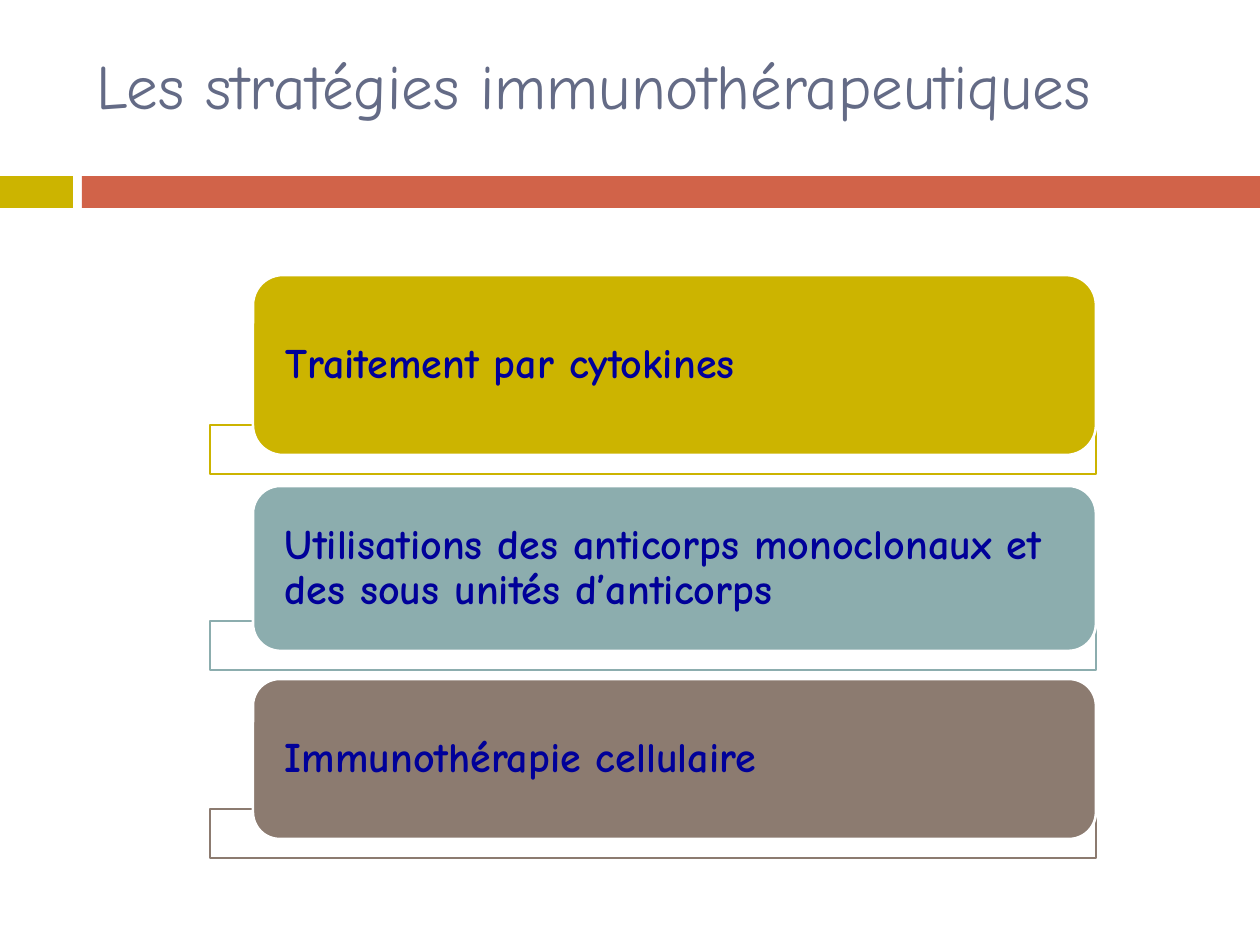
from pptx import Presentation
from pptx.dml.color import RGBColor
from pptx.enum.shapes import MSO_SHAPE
from pptx.enum.text import MSO_ANCHOR, PP_ALIGN
from pptx.util import Emu, Pt

RECTANGLE = MSO_SHAPE.RECTANGLE
ROUNDED = MSO_SHAPE.ROUNDED_RECTANGLE
MIDDLE = MSO_ANCHOR.MIDDLE
LEFT = PP_ALIGN.LEFT

GOLD = RGBColor(0xCC, 0xB4, 0x00)
CORAL = RGBColor(0xD1, 0x63, 0x49)
TEAL = RGBColor(0x8C, 0xAD, 0xAE)
TAUPE = RGBColor(0x8C, 0x7B, 0x70)
WHITE = RGBColor(0xFF, 0xFF, 0xFF)
SLATE = RGBColor(0x64, 0x6B, 0x86)
NAVY = RGBColor(0x00, 0x00, 0x99)

FONT = "Comic Neue"
SCALE = 914400 / 126


def px(*lengths):
    return [Emu(round(length * SCALE)) for length in lengths]


def add_box(kind, bounds, fill, line=None):
    shape = slide.shapes.add_shape(kind, *px(*bounds))
    shape.shadow.inherit = False
    shape.fill.solid()
    shape.fill.fore_color.rgb = fill
    if line is None:
        shape.line.fill.background()
    else:
        shape.line.color.rgb = line
        shape.line.width = Pt(1.5)
    return shape


presentation = Presentation()
presentation.slide_width, presentation.slide_height = px(1260, 945)
slide = presentation.slides.add_slide(presentation.slide_layouts[6])

add_box(RECTANGLE, (0, 176, 73, 32), GOLD)
add_box(RECTANGLE, (82, 176, 1178, 32), CORAL)

title = slide.shapes.add_textbox(*px(84, 49, 1124, 70))
title_frame = title.text_frame
title_frame.word_wrap = True
title_frame.vertical_anchor = MIDDLE
title_frame.text = "Les stratégies immunothérapeutiques"
title_font = title_frame.paragraphs[0].runs[0].font
title_font.name = FONT
title_font.size = Pt(36)
title_font.color.rgb = SLATE

strategies = [
    ("Traitement par cytokines", 275, 180, GOLD),
    ("Utilisations des anticorps monoclonaux et des sous unités d’anticorps", 486, 165, TEAL),
    ("Immunothérapie cellulaire", 679, 160, TAUPE),
]
for text, top, height, color in strategies:
    add_box(RECTANGLE, (210, top + height - 30, 886, 49), WHITE, color)
    card = add_box(ROUNDED, (253, top, 843, height), color, WHITE)
    frame = card.text_frame
    frame.word_wrap = True
    frame.vertical_anchor = MIDDLE
    frame.margin_left, frame.margin_top, frame.margin_right, frame.margin_bottom = px(24, 0, 24, 0)
    frame.text = text
    paragraph = frame.paragraphs[0]
    paragraph.alignment = LEFT
    paragraph.line_spacing = 0.9
    font = paragraph.runs[0].font
    font.name = FONT
    font.size = Pt(24)
    font.bold = True
    font.color.rgb = NAVY

presentation.save("out.pptx")
